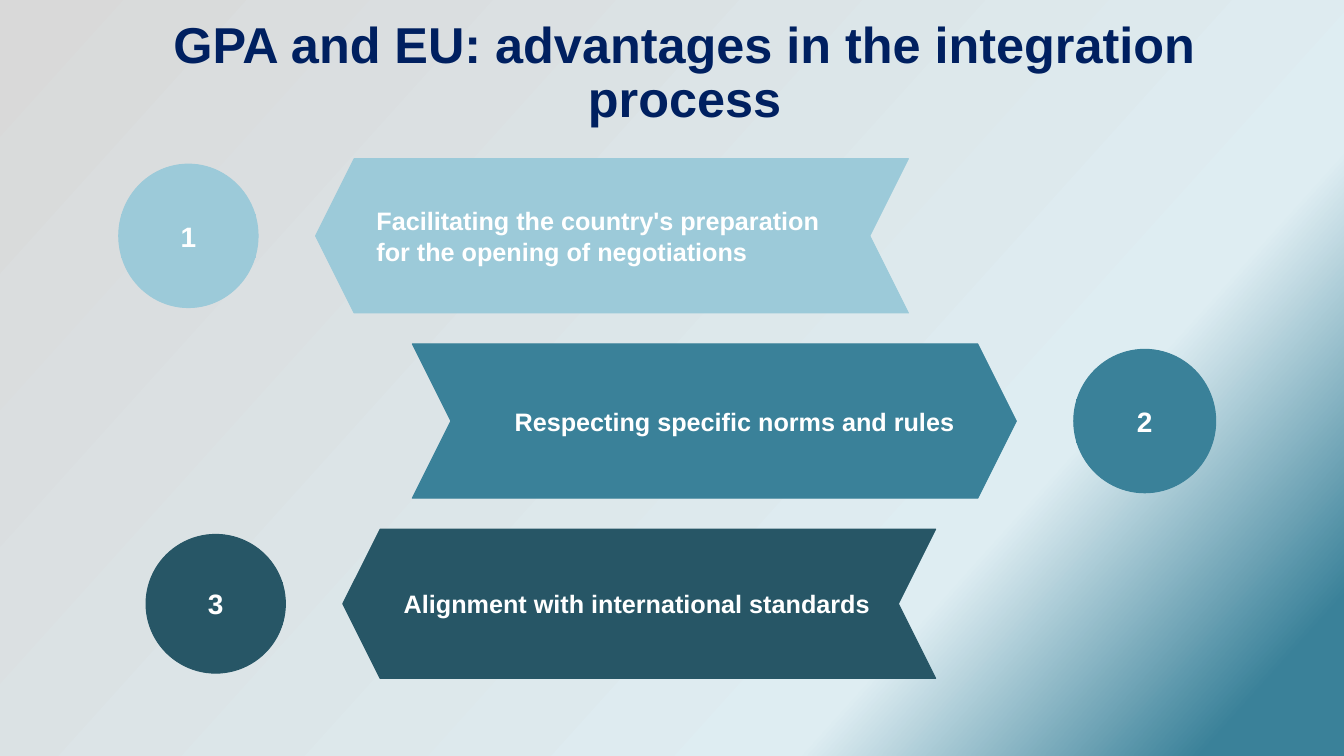
from copy import deepcopy
from pptx import Presentation
from pptx.dml.color import RGBColor
from pptx.enum.shapes import MSO_SHAPE
from pptx.enum.text import MSO_ANCHOR, PP_ALIGN
from pptx.util import Inches, Pt

# Content: banners run down the slide; left, width and height are percent of the slide
TITLE = "GPA and EU: advantages in the integration process"
BANNERS = [
    {"number": "1", "text": "Facilitating the country's preparation for the opening of negotiations",
     "color": "9CCAD9", "points_left": True, "left": 23.48, "width": 44.11, "height": 20.4},
    {"number": "2", "text": "Respecting specific norms and rules",
     "color": "3A8199", "points_left": False, "left": 30.68, "width": 44.94, "height": 20.4},
    {"number": "3", "text": "Alignment with international standards",
     "color": "275666", "points_left": True, "left": 25.51, "width": 44.11, "height": 19.73},
]

THEME = {
    "title": {"name": "Arial", "size": Pt(36), "bold": True, "color": "002060"},
    "number": {"name": "Arial", "size": Pt(20), "bold": True, "color": "FFFFFF"},
    "label": {"name": "Arial", "size": Pt(18), "bold": True, "color": "FFFFFF"},
    "background": [(0, "D9D9D9"), (0.73, "DEEDF2"), (0.93, "3A8199")],
    "background_angle": 318,
    "outline": Pt(0.75),
}

# Grid
SLIDE_WIDTH, SLIDE_HEIGHT = Inches(13.33), Inches(7.5)
FIRST_ROW, ROW_PITCH = 0.21 * SLIDE_HEIGHT, 0.245 * SLIDE_HEIGHT
BADGE_GAP = Inches(0.57)
NUMBER_INSET = Inches(0.03)


def write_text(shape, text, style, alignment, inset):
    frame = shape.text_frame
    settings = {"word_wrap": True, "vertical_anchor": MSO_ANCHOR.MIDDLE,
                "margin_left": inset, "margin_right": inset,
                "margin_top": inset, "margin_bottom": inset}
    for name, value in settings.items():
        setattr(frame, name, value)
    paragraph = frame.paragraphs[0]
    paragraph.alignment = alignment
    run = paragraph.add_run()
    run.text = text
    for name, value in THEME[style].items():
        if name == "color":
            run.font.color.rgb = RGBColor.from_string(value)
        else:
            setattr(run.font, name, value)
    return paragraph


def add_part(group, kind, left, middle, width, height, color):
    shape = group.shapes.add_shape(kind, int(left), int(middle - height / 2), int(width), int(height))
    shape.shadow.inherit = False
    shape.fill.solid()
    shape.fill.fore_color.rgb = RGBColor.from_string(color)
    shape.line.color.rgb = RGBColor.from_string(color)
    shape.line.width = THEME["outline"]
    return shape


def add_banner(slide, row, banner):
    color, points_left = banner["color"], banner["points_left"]
    left = banner["left"] / 100 * SLIDE_WIDTH
    width = banner["width"] / 100 * SLIDE_WIDTH
    height = banner["height"] / 100 * SLIDE_HEIGHT
    middle = FIRST_ROW + row * ROW_PITCH + height / 2
    group = slide.shapes.add_group_shape()

    # Arrow banner
    chevron = add_part(group, MSO_SHAPE.CHEVRON, left, middle, width, height, color)
    chevron.adjustments[0] = 0.25
    if points_left:
        chevron.element.spPr.xfrm.set("flipH", "1")

    # Numbered badge on the side the banner points to
    badge_width = 0.235 * width
    badge_left = left - BADGE_GAP - badge_width if points_left else left + width + BADGE_GAP
    add_part(group, MSO_SHAPE.OVAL, badge_left, middle, badge_width, 0.93 * height, color)
    number = add_part(group, MSO_SHAPE.RECTANGLE, badge_left + NUMBER_INSET, middle,
                      badge_width - 2 * NUMBER_INSET, 0.28 * height, color)
    write_text(number, banner["number"], "number", PP_ALIGN.CENTER, Inches(0.1))

    # Banner label
    label_width = 0.828 * width
    label = add_part(group, MSO_SHAPE.RECTANGLE, left + (width - label_width) / 2, middle,
                     label_width, 0.4 * height, color)
    write_text(label, banner["text"], "label",
               PP_ALIGN.LEFT if points_left else PP_ALIGN.RIGHT, Inches(0.1))


def paint_background(slide):
    fill = slide.background.fill
    fill.gradient()
    fill.gradient_angle = THEME["background_angle"]
    stop_list = next(slide.element.iter("{*}gsLst"))
    stop_list.append(deepcopy(stop_list[-1]))
    for stop, (position, color) in zip(fill.gradient_stops, THEME["background"]):
        stop.position = position
        stop.color.rgb = RGBColor.from_string(color)


def main():
    presentation = Presentation()
    presentation.slide_width, presentation.slide_height = SLIDE_WIDTH, SLIDE_HEIGHT
    slide = presentation.slides.add_slide(presentation.slide_layouts[6])
    paint_background(slide)

    # Title
    title = slide.shapes.add_textbox(Inches(1.07), Inches(0.41), Inches(11.44), Inches(0.65))
    paragraph = write_text(title, TITLE, "title", PP_ALIGN.CENTER, Inches(0.13))
    paragraph.line_spacing = 0.9

    # Banners
    for row, banner in enumerate(BANNERS):
        add_banner(slide, row, banner)
    presentation.save("out.pptx")


if __name__ == "__main__":
    main()
